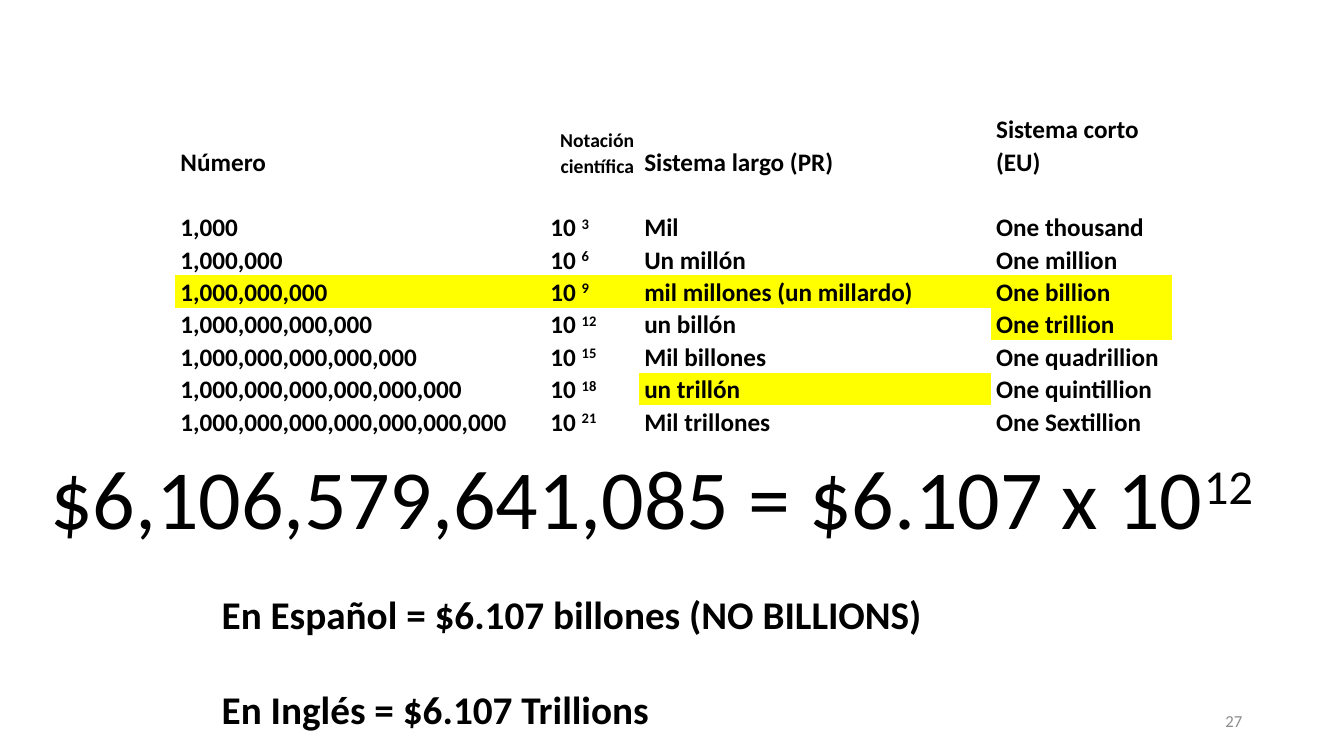
import pptx
import pptx.dml.color
import pptx.enum.text
import pptx.util

SLIDE_WIDTH, SLIDE_HEIGHT = 13.33, 7.5
FONT_NAME = "Calibri"
BLACK, GRAY, YELLOW = "000000", "8C8C8C", "FFFF00"
NO_GRID_STYLE = "{2D5ABB26-0587-4C30-8999-92F81FD0307C}"
ALIGN = pptx.enum.text.PP_ALIGN
ANCHOR = pptx.enum.text.MSO_ANCHOR

COLUMN_WIDTHS = [3.67, 0.93, 3.49, 1.79]
HEADER_HEIGHT, ROW_HEIGHT = 1.27, 0.32
HEADERS = ["Número", "Notación científica", "Sistema largo (PR)", "Sistema corto (EU)"]
NAMES = [
    ("Mil", "One thousand"),
    ("Un millón", "One million"),
    ("mil millones (un millardo)", "One billion"),
    ("un billón", "One trillion"),
    ("Mil billones", "One quadrillion"),
    ("un trillón", "One quintillion"),
    ("Mil trillones", "One Sextillion"),
]
HIGHLIGHTS = {(9, 0), (9, 1), (9, 2), (9, 3), (12, 3), (18, 2)}


def color(value):
    return pptx.dml.color.RGBColor.from_string(value)


def inches(*lengths):
    return [pptx.util.Inches(length) for length in lengths]


def add_run(paragraph, text, size, bold=False, fill=BLACK, superscript=False):
    run = paragraph.add_run()
    run.text = text
    run.font.name = FONT_NAME
    run.font.size = pptx.util.Pt(size)
    run.font.bold = bold
    run.font.color.rgb = color(fill)
    if superscript:
        run.font._element.set("baseline", "30000")


def add_text_frame(slide, box, wrap=True):
    text_frame = slide.shapes.add_textbox(*inches(*box)).text_frame
    text_frame.word_wrap = wrap
    return text_frame


def write_cell(cell, text, exponent="", size=18, align=ALIGN.LEFT):
    paragraph = cell.text_frame.paragraphs[0]
    paragraph.alignment = align
    paragraph.line_spacing = 1.07
    add_run(paragraph, text, size, bold=True)
    if exponent:
        add_run(paragraph, exponent, size, bold=True, superscript=True)


def add_number_table(slide, left, top):
    row_count = len(NAMES) + 2
    height = HEADER_HEIGHT + ROW_HEIGHT * (row_count - 1)
    frame = slide.shapes.add_table(
        row_count, len(HEADERS), *inches(left, top, sum(COLUMN_WIDTHS), height))
    table = frame.table
    table.first_row = table.horz_banding = False
    table._tbl.tblPr.find(pptx.oxml.ns.qn("a:tableStyleId")).text = NO_GRID_STYLE
    for column, width in zip(table.columns, COLUMN_WIDTHS):
        column.width = pptx.util.Inches(width)
    for index, row in enumerate(table.rows):
        row.height = pptx.util.Inches(ROW_HEIGHT if index else HEADER_HEIGHT)
    for cell in table.iter_cells():
        cell.margin_left = cell.margin_right = pptx.util.Inches(0.05)
        cell.margin_top = cell.margin_bottom = 0
        cell.vertical_anchor = ANCHOR.BOTTOM
        cell.fill.background()

    for column, header in enumerate(HEADERS):
        notation = column == 1
        write_cell(table.cell(0, column), header, size=14 if notation else 18,
                   align=ALIGN.RIGHT if notation else ALIGN.LEFT)
    for index, (long_name, short_name) in enumerate(NAMES):
        exponent = 3 * (index + 1)
        row = index + 2
        write_cell(table.cell(row, 0), f"{10 ** exponent:,}")
        write_cell(table.cell(row, 1), "10 ", str(exponent))
        write_cell(table.cell(row, 2), long_name)
        write_cell(table.cell(row, 3), short_name)
        for column in range(len(HEADERS)):
            if (exponent, column) in HIGHLIGHTS:
                cell = table.cell(row, column)
                cell.fill.solid()
                cell.fill.fore_color.rgb = color(YELLOW)


def add_equation(slide, box):
    text_frame = add_text_frame(slide, box, wrap=False)
    text_frame.auto_size = pptx.enum.text.MSO_AUTO_SIZE.SHAPE_TO_FIT_TEXT
    paragraph = text_frame.paragraphs[0]
    add_run(paragraph, "$6,106,579,641,085 = $6.107 x 10", 60)
    add_run(paragraph, "12", 60, superscript=True)


def add_readings(slide, box):
    text_frame = add_text_frame(slide, box)
    text_frame.auto_size = pptx.enum.text.MSO_AUTO_SIZE.SHAPE_TO_FIT_TEXT
    add_run(text_frame.paragraphs[0], "En Español = $6.107 billones (NO BILLIONS)", 28, bold=True)
    english = text_frame.add_paragraph()
    english.space_before = pptx.util.Pt(34)
    add_run(english, "En Inglés = $6.107 Trillions", 28, bold=True)


def add_slide_number(slide, box):
    text_frame = add_text_frame(slide, box)
    text_frame.vertical_anchor = ANCHOR.MIDDLE
    paragraph = text_frame.paragraphs[0]
    paragraph.alignment = ALIGN.RIGHT
    add_run(paragraph, "27", 12, fill=GRAY)


def main():
    presentation = pptx.Presentation()
    presentation.slide_width, presentation.slide_height = inches(SLIDE_WIDTH, SLIDE_HEIGHT)
    slide = presentation.slides.add_slide(presentation.slide_layouts[6])
    add_slide_number(slide, (9.42, 6.95, 3, 0.4))
    add_equation(slide, (0.4, 4.37, 12.93, 1.11))
    add_number_table(slide, 1.74, 0.5)
    add_readings(slide, (2.1, 5.81, 10.32, 1.51))
    presentation.save("out.pptx")


if __name__ == "__main__":
    main()
